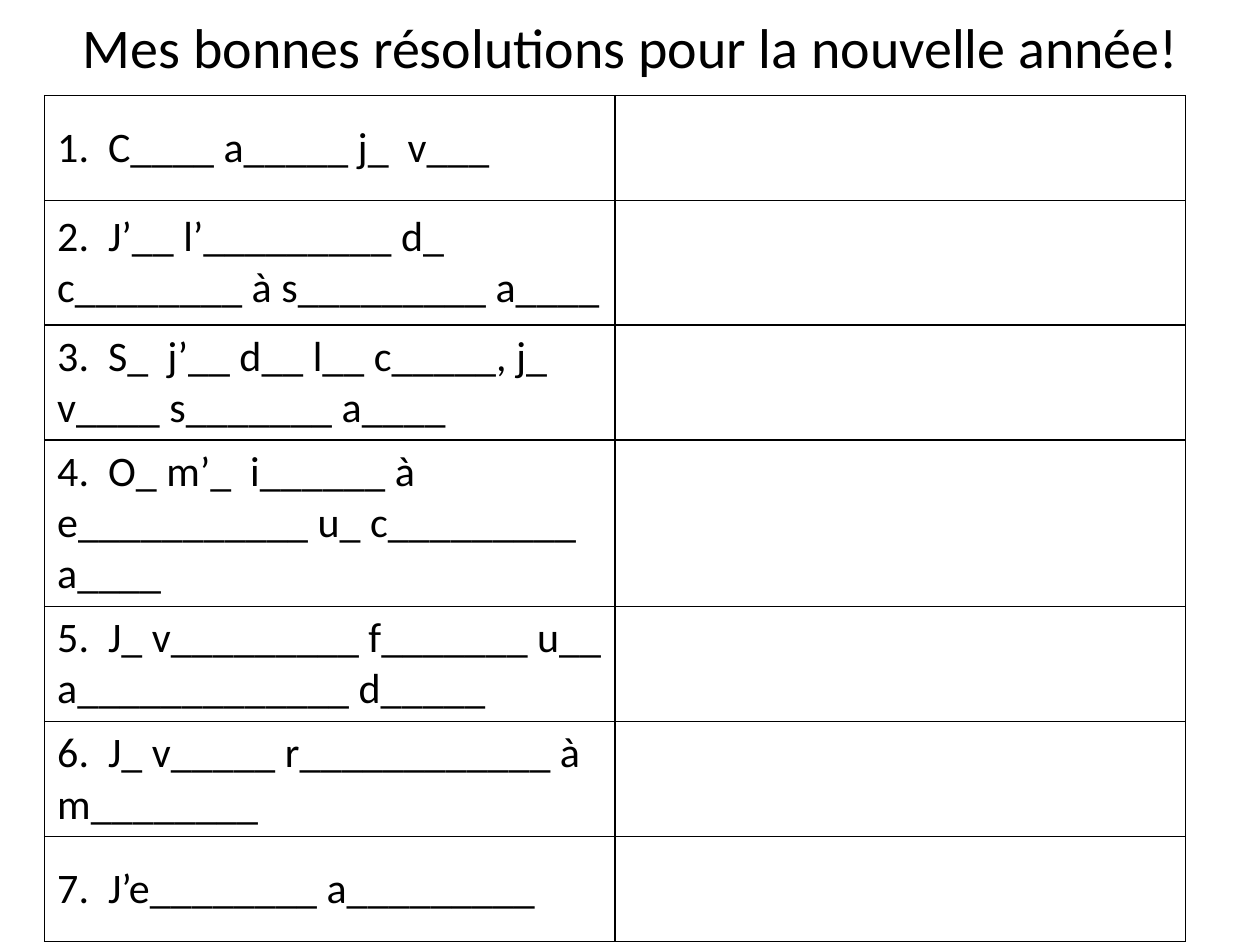
import pptx
import pptx.dml.color
import pptx.enum.text
import pptx.oxml
import pptx.oxml.ns
import pptx.util
from dataclasses import dataclass

Pt = pptx.util.Pt


@dataclass(frozen=True)
class Theme:
    font: str = "Calibri"
    ink: str = "000000"
    title_size: int = 32
    body_size: int = 24
    border: int = 1


THEME = Theme()
TITLE = "Mes bonnes résolutions pour la nouvelle année!"
RESOLUTIONS = [  # sentence to complete, row height
    ("1.  C____ a_____ j_  v___", 60),
    ("2.  J’__ l’_________ d_ c________ à s_________ a____", 71),
    ("3.  S_  j’__ d__ l__ c_____, j_ v____ s_______ a____", 62),
    ("4.  O_ m’_  i______ à e___________ u_ c_________ a____", 62),
    ("5.  J_ v_________ f_______ u__ a_____________ d_____", 62),
    ("6.  J_ v_____ r____________ à m________", 60),
    ("7.  J’e________ a_________", 60),
]
COLUMN_WIDTH = 326


def style_text(frame, size):
    for paragraph in frame.paragraphs:
        for font in [paragraph.font] + [run.font for run in paragraph.runs]:
            font.name = THEME.font
            font.size = Pt(size)
            font.color.rgb = pptx.dml.color.RGBColor.from_string(THEME.ink)


def outline_cell(cell):
    properties = cell._tc.get_or_add_tcPr()
    # Borders must come before the fill in the cell properties
    for position, side in enumerate(("lnL", "lnR", "lnT", "lnB")):
        properties.insert(position, pptx.oxml.parse_xml(
            f'<a:{side} {pptx.oxml.ns.nsdecls("a")} w="{Pt(THEME.border)}">'
            f'<a:solidFill><a:srgbClr val="{THEME.ink}"/></a:solidFill></a:{side}>'))


def add_title(slide):
    title = slide.shapes.add_textbox(Pt(36.7), Pt(3.6), Pt(648), Pt(90)).text_frame
    title.word_wrap = True
    title.text = TITLE
    title.paragraphs[0].alignment = pptx.enum.text.PP_ALIGN.CENTER
    style_text(title, THEME.title_size)


def add_worksheet(slide):
    total_height = sum(height for _, height in RESOLUTIONS)
    worksheet = slide.shapes.add_table(
        len(RESOLUTIONS), 2, Pt(25.5), Pt(54.7),
        Pt(2 * COLUMN_WIDTH), Pt(total_height)).table
    worksheet.first_row = worksheet.horz_banding = False
    for column in worksheet.columns:
        column.width = Pt(COLUMN_WIDTH)
    for row, (sentence, height) in zip(worksheet.rows, RESOLUTIONS):
        row.height = Pt(height)
        row.cells[0].text_frame.text = sentence
        for cell in row.cells:
            cell.vertical_anchor = pptx.enum.text.MSO_ANCHOR.MIDDLE
            cell.fill.background()
            outline_cell(cell)
            style_text(cell.text_frame, THEME.body_size)


def main():
    deck = pptx.Presentation()
    deck.slide_width, deck.slide_height = Pt(720), Pt(540)
    slide = deck.slides.add_slide(deck.slide_layouts[6])
    # Sentences on the left, room for answers on the right
    add_worksheet(slide)
    add_title(slide)
    deck.save("out.pptx")


if __name__ == "__main__":
    main()
